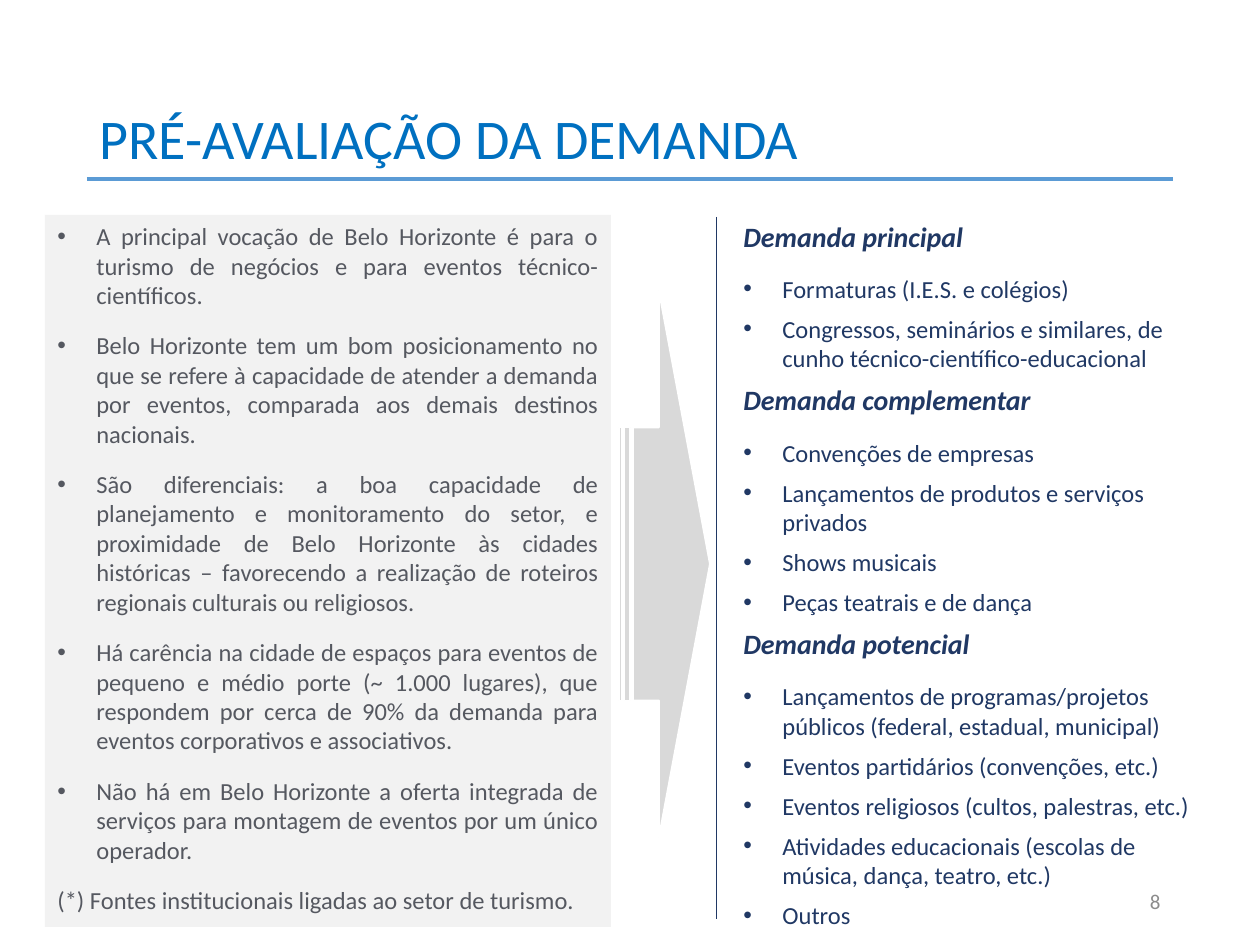
from dataclasses import dataclass
from pptx import Presentation
from pptx.dml.color import RGBColor
from pptx.enum.shapes import MSO_CONNECTOR, MSO_SHAPE
from pptx.enum.text import MSO_ANCHOR, PP_ALIGN
from pptx.oxml.ns import qn
from pptx.util import Emu, Pt
from lxml.etree import SubElement

PX_PER_INCH = 126


@dataclass(frozen=True)
class Theme:
    font: str = "Calibri"
    title: str = "0070C0"
    rule: str = "5B9BD5"
    number: str = "8C8C8C"
    panel: str = "F2F2F2"
    panel_text: str = "555860"
    navy: str = "203864"
    arrow: str = "D9D9D9"
    white: str = "FFFFFF"
    title_size: int = 32
    heading_size: int = 16
    body_size: int = 14
    number_size: int = 12


THEME = Theme()

FINDINGS = [
    "A principal vocação de Belo Horizonte é para o turismo de negócios e para eventos técnico-científicos.",
    "Belo Horizonte tem um bom posicionamento no que se refere à capacidade de atender a demanda por eventos, comparada aos demais destinos nacionais.",
    "São diferenciais: a boa capacidade de planejamento e monitoramento do setor, e proximidade de Belo Horizonte às cidades históricas – favorecendo a realização de roteiros regionais culturais ou religiosos.",
    "Há carência na cidade de espaços para eventos de pequeno e médio porte (~ 1.000 lugares), que respondem por cerca de 90% da demanda para eventos corporativos e associativos.",
    "Não há em Belo Horizonte a oferta integrada de serviços para montagem de eventos por um único operador.",
]
FOOTNOTE = "(*) Fontes institucionais ligadas ao setor de turismo."

DEMANDS = {
    "Demanda principal": [
        "Formaturas (I.E.S. e colégios)",
        "Congressos, seminários e similares, de cunho técnico-científico-educacional",
    ],
    "Demanda complementar": [
        "Convenções de empresas",
        "Lançamentos de produtos e serviços privados",
        "Shows musicais",
        "Peças teatrais e de dança",
    ],
    "Demanda potencial": [
        "Lançamentos de programas/projetos públicos (federal, estadual, municipal)",
        "Eventos partidários (convenções, etc.)",
        "Eventos religiosos (cultos, palestras, etc.)",
        "Atividades educacionais (escolas de música, dança, teatro, etc.)",
        "Outros",
    ],
}


def px(length):
    return Emu(round(length * 914400 / PX_PER_INCH))


def paint(fill, color):
    fill.solid()
    fill.fore_color.rgb = RGBColor.from_string(color)


def style(para, size, color, bold=False, italic=False):
    font = para.font
    font.name = THEME.font
    font.size = Pt(size)
    font.bold = bold
    font.italic = italic
    font.color.rgb = RGBColor.from_string(color)


def add_bullet(para):
    properties = para._p.get_or_add_pPr()
    properties.set("marL", str(px(39)))
    properties.set("indent", str(-px(39)))
    SubElement(properties, qn("a:buFont")).set("typeface", "Arial")
    SubElement(properties, qn("a:buChar")).set("char", "•")


def write_para(frame, text, size, color, after, bullet=False, align=PP_ALIGN.LEFT, emphasis=False):
    para = frame.paragraphs[0] if not frame.text else frame.add_paragraph()
    para.text = text
    para.alignment = align
    para.space_after = Pt(after)
    if bullet:
        add_bullet(para)
    style(para, size, color, emphasis, emphasis)


def add_line(page, left, top, right, bottom, color, width):
    line = page.shapes.add_connector(MSO_CONNECTOR.STRAIGHT, px(left), px(top), px(right), px(bottom))
    line.line.color.rgb = RGBColor.from_string(color)
    line.line.width = Pt(width)
    SubElement(line._element.spPr, qn("a:effectLst"))


def add_title(page, left, top, width, height):
    title = page.shapes.title
    title.left, title.top, title.width, title.height = map(px, (left, top, width, height))
    frame = title.text_frame
    frame.text = "PRÉ-AVALIAÇÃO DA DEMANDA"
    frame.word_wrap = True
    frame.vertical_anchor = MSO_ANCHOR.MIDDLE
    para = frame.paragraphs[0]
    para.alignment = PP_ALIGN.LEFT
    para.line_spacing = 0.9
    style(para, THEME.title_size, THEME.title)
    add_line(page, left, top + 129, left + width, top + 129, THEME.rule, 2.25)


def add_page_number(page, left, top, width, height):
    box = page.shapes.add_textbox(px(left), px(top), px(width), px(height))
    frame = box.text_frame
    frame.word_wrap = True
    frame.vertical_anchor = MSO_ANCHOR.MIDDLE
    write_para(frame, "8", THEME.number_size, THEME.number, 0, align=PP_ALIGN.RIGHT)


def add_findings(page, left, top, width, height):
    panel = page.shapes.add_shape(MSO_SHAPE.RECTANGLE, px(left), px(top), px(width), px(height))
    panel.shadow.inherit = False
    paint(panel.fill, THEME.panel)
    panel.line.fill.background()
    frame = panel.text_frame
    frame.word_wrap = True
    frame.vertical_anchor = MSO_ANCHOR.TOP
    for text in FINDINGS + [FOOTNOTE]:
        write_para(frame, text, THEME.body_size, THEME.panel_text, 12,
                   bullet=text != FOOTNOTE, align=PP_ALIGN.JUSTIFY)


def add_arrow(page, left, top, width, height):
    arrow = page.shapes.add_shape(MSO_SHAPE.STRIPED_RIGHT_ARROW, px(left), px(top), px(width), px(height))
    arrow.shadow.inherit = False
    arrow.adjustments[0] = 0.5
    arrow.adjustments[1] = 0.56
    paint(arrow.fill, THEME.arrow)
    arrow.line.color.rgb = RGBColor.from_string(THEME.white)
    arrow.line.width = Pt(1)


def add_demands(page, left, top, width, height):
    box = page.shapes.add_textbox(px(left), px(top), px(width), px(height))
    frame = box.text_frame
    frame.word_wrap = True
    for heading, items in DEMANDS.items():
        write_para(frame, heading, THEME.heading_size, THEME.navy, 12, emphasis=True)
        for item in items:
            write_para(frame, item, THEME.body_size, THEME.navy, 6, bullet=True)
    add_line(page, left - 15, top + 4, left - 15, top + 706, THEME.navy, 0.5)


def main():
    deck = Presentation()
    deck.slide_width, deck.slide_height = px(1260), px(945)
    page = deck.slides.add_slide(deck.slide_layouts[5])
    add_title(page, 87, 50, 1086, 183)
    add_page_number(page, 890, 876, 283, 50)
    add_findings(page, 45, 215, 566, 712)
    add_demands(page, 731, 213, 488, 730)
    add_arrow(page, 619, 291, 91, 546)
    deck.save("out.pptx")


if __name__ == "__main__":
    main()
